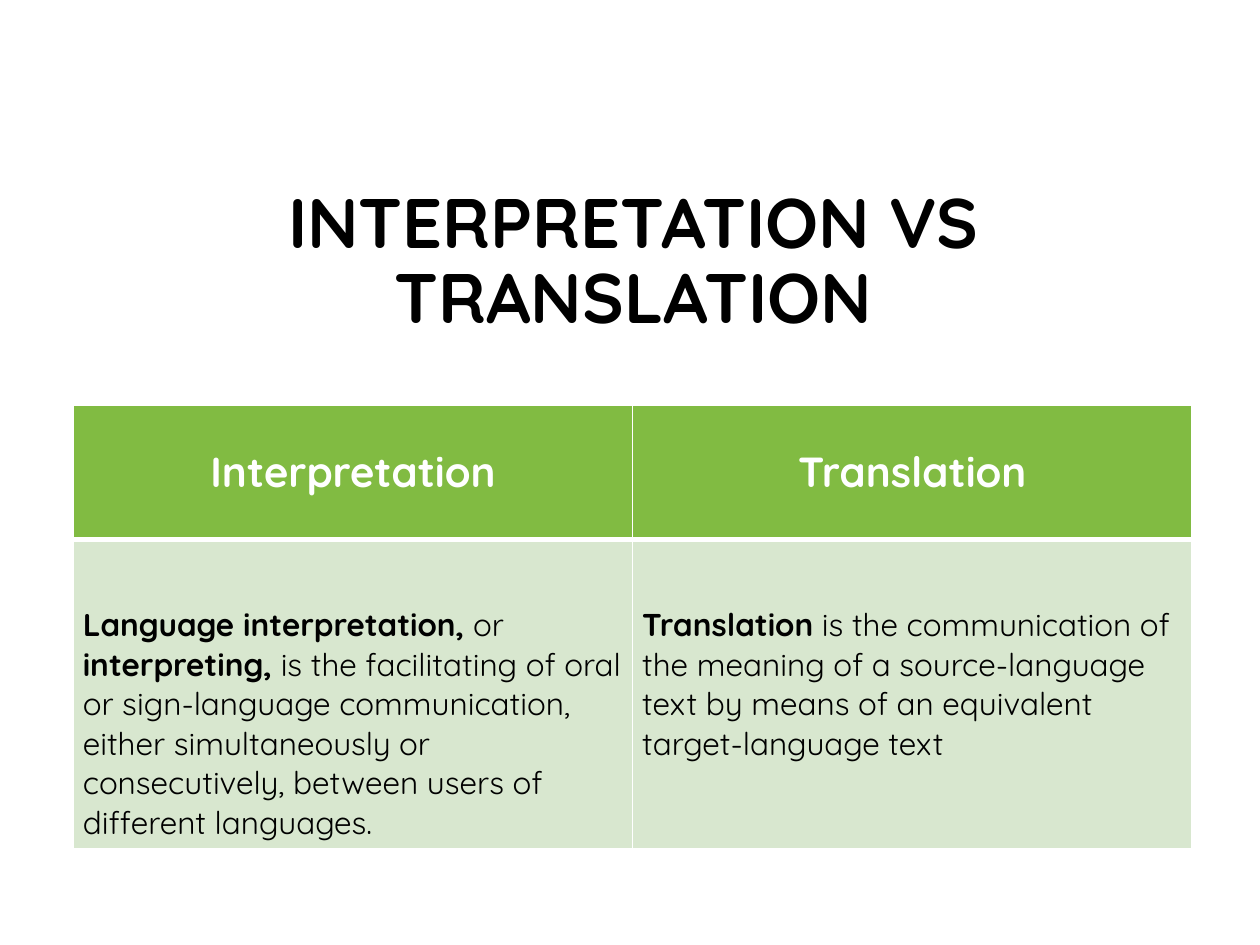
"""Build a slide that compares interpretation with translation in a table."""
from dataclasses import dataclass

from lxml.etree import SubElement
from pptx import Presentation
from pptx.dml.color import RGBColor
from pptx.enum.text import MSO_ANCHOR, PP_ALIGN
from pptx.oxml.ns import qn
from pptx.util import Cm, Pt


@dataclass(frozen=True)
class Theme:
    font: str = "Quicksand"
    ink: str = "000000"
    white: str = "FFFFFF"
    header_fill: str = "81BB42"
    body_fill: str = "D8E7CF"
    title_size: int = 40
    header_size: int = 24
    body_size: int = 18
    thin_line: int = 1
    thick_line: int = 3


def add_text(paragraph, text, *, font, size, color, bold=False):
    run = paragraph.add_run()
    run.text = text
    run.font.name = font
    run.font.size = Pt(size)
    run.font.bold = bold
    run.font.color.rgb = RGBColor.from_string(color)


class SlideBuilder:
    def __init__(self, slide, theme):
        self.slide = slide
        self.theme = theme

    def title(self, text, left, top, width, height):
        shape = self.slide.shapes.add_textbox(Cm(left), Cm(top), Cm(width), Cm(height))
        frame = shape.text_frame
        frame.word_wrap = True
        frame.vertical_anchor = MSO_ANCHOR.MIDDLE
        paragraph = frame.paragraphs[0]
        paragraph.alignment = PP_ALIGN.CENTER
        paragraph.line_spacing = 0.9
        add_text(paragraph, text, font=self.theme.font, size=self.theme.title_size,
                 color=self.theme.ink, bold=True)

    def borders(self, cell, **widths):
        properties = cell._tc.get_or_add_tcPr()
        for index, (side, width) in enumerate(widths.items()):
            line = properties.makeelement(qn(f"a:ln{side}"), {"w": str(Pt(width))})
            fill = SubElement(line, qn("a:solidFill"))
            SubElement(fill, qn("a:srgbClr"), val=self.theme.white)
            properties.insert(index, line)

    def cell(self, cell, runs, *, fill, size, color, centered=False, top_margin=0.13,
             bottom_line=1, top_line=1):
        cell.fill.solid()
        cell.fill.fore_color.rgb = RGBColor.from_string(fill)
        cell.margin_left = cell.margin_right = Cm(0.19)
        cell.margin_top, cell.margin_bottom = Cm(top_margin), Cm(0.13)
        cell.vertical_anchor = MSO_ANCHOR.MIDDLE if centered else MSO_ANCHOR.TOP
        paragraph = cell.text_frame.paragraphs[0]
        paragraph.alignment = PP_ALIGN.CENTER if centered else PP_ALIGN.LEFT
        for text, bold in runs:
            add_text(paragraph, text, font=self.theme.font, size=size, color=color, bold=bold)
        thin = self.theme.thin_line
        self.borders(cell, L=thin, R=thin, T=top_line, B=bottom_line)

    def comparison(self, columns, left, top, width, row_heights):
        theme = self.theme
        frame = self.slide.shapes.add_table(len(row_heights), len(columns), Cm(left), Cm(top),
                                            Cm(width), Cm(sum(row_heights)))
        table = frame.table
        for row, height in zip(table.rows, row_heights):
            row.height = Cm(height)
        for index, (heading, runs) in enumerate(columns):
            table.columns[index].width = Cm(width / len(columns))
            self.cell(table.cell(0, index), [(heading, True)], fill=theme.header_fill,
                      size=theme.header_size, color=theme.white, centered=True,
                      bottom_line=theme.thick_line)
            self.cell(table.cell(1, index), runs, fill=theme.body_fill,
                      size=theme.body_size, color=theme.ink, top_margin=1.33,
                      top_line=theme.thick_line)


def main():
    presentation = Presentation()
    presentation.slide_width, presentation.slide_height = Cm(25.4), Cm(19.05)
    slide = presentation.slides.add_slide(presentation.slide_layouts[6])
    builder = SlideBuilder(slide, Theme())
    builder.title("INTERPRETATION VS TRANSLATION", 1.55, 3.52, 22.43, 3.58)
    columns = [
        ("Interpretation", [
            ("Language interpretation,", True),
            (" or ", False),
            ("interpreting,", True),
            (" is the facilitating of oral or sign-language communication, either "
             "simultaneously or consecutively, between users of different languages.", False),
        ]),
        ("Translation", [
            ("Translation", True),
            (" is the communication of the meaning of a source-language text by means of "
             "an equivalent target-language text", False),
        ]),
    ]
    builder.comparison(columns, 1.48, 8.16, 22.55, (2.71, 6.24))
    presentation.save("out.pptx")


if __name__ == "__main__":
    main()
